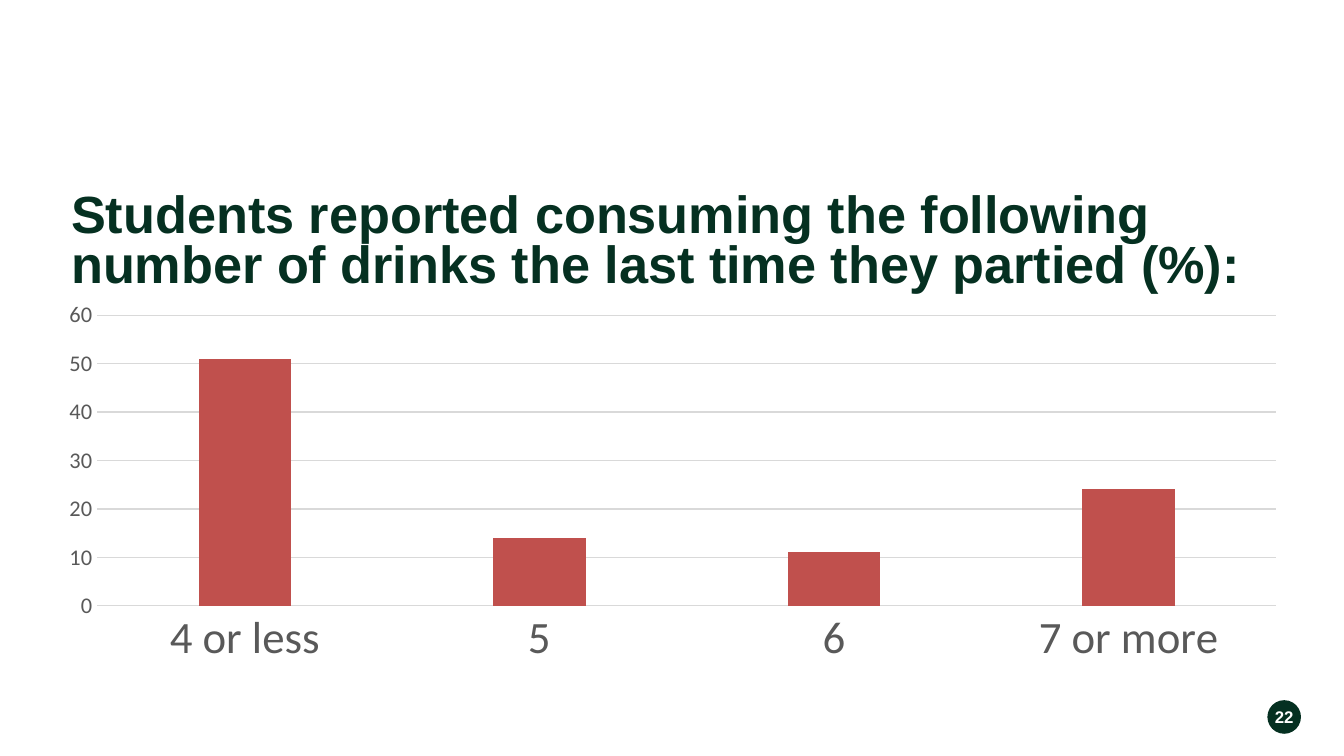
from dataclasses import dataclass

import pptx
import pptx.chart.data
import pptx.dml.color
import pptx.enum.chart
import pptx.enum.shapes
import pptx.enum.text
import pptx.util
from pptx.util import Inches

COLORS = {
    "green": "053021",
    "white": "FFFFFF",
    "bar": "C0504D",
    "label": "595959",
    "grid": "D9D9D9",
}


@dataclass(frozen=True)
class Box:
    left: float
    top: float
    width: float
    height: float

    def lengths(self) -> tuple:
        return tuple(Inches(n) for n in (self.left, self.top, self.width, self.height))


TITLE = Box(0.33, 1.34, 9.35, 0.69)
CHART = Box(0.33, 2.19, 9.35, 2.82)
BADGE = Box(9.43, 5.21, 0.25, 0.25)

DRINKS = {"4 or less": 51, "5": 14, "6": 11, "7 or more": 24}


def color(name: str) -> pptx.dml.color.RGBColor:
    return pptx.dml.color.RGBColor.from_string(COLORS[name])


def set_values(target, values: dict) -> None:
    for name, value in values.items():
        setattr(target, name, value)


def set_font(font, size: float, color_name: str, family: str, bold: bool = False) -> None:
    set_values(font, {"size": pptx.util.Pt(size), "name": family, "bold": bold})
    font.color.rgb = color(color_name)


def set_margins(text_frame, horizontal: float, vertical: float) -> None:
    set_values(text_frame, {
        "margin_left": Inches(horizontal), "margin_right": Inches(horizontal),
        "margin_top": Inches(vertical), "margin_bottom": Inches(vertical),
    })


def set_line(line, color_name: str) -> None:
    line.color.rgb = color(color_name)
    line.width = pptx.util.Pt(0.75)


def add_title(slide, box: Box, text: str) -> None:
    title = slide.shapes.title
    title.left, title.top, title.width, title.height = box.lengths()
    text_frame = title.text_frame
    text_frame.text = text
    set_margins(text_frame, 0.2, 0.1)
    set_values(text_frame, {
        "word_wrap": True,
        "auto_size": pptx.enum.text.MSO_AUTO_SIZE.NONE,
        "vertical_anchor": pptx.enum.text.MSO_ANCHOR.TOP,
    })
    paragraph = text_frame.paragraphs[0]
    set_values(paragraph, {
        "alignment": pptx.enum.text.PP_ALIGN.LEFT,
        "line_spacing": 0.8,
        "space_before": pptx.util.Pt(0),
    })
    set_font(paragraph.runs[0].font, 28, "green", "Arial", bold=True)


def add_drinks_chart(slide, box: Box, values: dict) -> None:
    data = pptx.chart.data.CategoryChartData()
    data.categories = list(values)
    data.add_series("Series 1", list(values.values()))
    kind = pptx.enum.chart.XL_CHART_TYPE.COLUMN_CLUSTERED
    chart = slide.shapes.add_chart(kind, *box.lengths(), data).chart
    set_values(chart, {"has_legend": False, "has_title": False})
    chart.font.size = pptx.util.Pt(10)
    chart.font.name = "Calibri"

    # Columns
    plot = chart.plots[0]
    set_values(plot, {"gap_width": 219, "vary_by_categories": False})
    fill = plot.series[0].format.fill
    fill.solid()
    fill.fore_color.rgb = color("bar")

    # Axes
    for axis, size in ((chart.category_axis, 24), (chart.value_axis, 12)):
        no_ticks = pptx.enum.chart.XL_TICK_MARK.NONE
        set_values(axis, {"major_tick_mark": no_ticks, "minor_tick_mark": no_ticks})
        set_font(axis.tick_labels.font, size, "label", "Calibri")
    set_line(chart.category_axis.format.line, "grid")
    value_axis = chart.value_axis
    set_values(value_axis, {
        "minimum_scale": 0, "maximum_scale": 60, "major_unit": 10,
        "has_major_gridlines": True,
    })
    value_axis.format.line.fill.background()
    set_line(value_axis.major_gridlines.format.line, "grid")


def add_page_badge(slide, box: Box, number: str) -> None:
    badge = slide.shapes.add_shape(pptx.enum.shapes.MSO_SHAPE.OVAL, *box.lengths())
    badge.shadow.inherit = False
    badge.fill.solid()
    badge.fill.fore_color.rgb = color("green")
    badge.line.fill.background()
    text_frame = badge.text_frame
    text_frame.text = number
    set_margins(text_frame, 0, 0)
    set_values(text_frame, {
        "word_wrap": False,
        "vertical_anchor": pptx.enum.text.MSO_ANCHOR.MIDDLE,
    })
    paragraph = text_frame.paragraphs[0]
    paragraph.alignment = pptx.enum.text.PP_ALIGN.CENTER
    set_font(paragraph.runs[0].font, 9, "white", "Arial", bold=True)


def main() -> None:
    # Widescreen slide, 16 to 9
    presentation = pptx.Presentation()
    presentation.slide_width = Inches(10)
    presentation.slide_height = Inches(10 * 9 / 16)
    title_only = presentation.slide_layouts[5]
    slide = presentation.slides.add_slide(title_only)

    add_page_badge(slide, BADGE, "22")
    add_title(slide, TITLE, "Students reported consuming the following "
              "number of drinks the last time they partied (%):")
    add_drinks_chart(slide, CHART, DRINKS)
    presentation.save("out.pptx")


if __name__ == "__main__":
    main()
